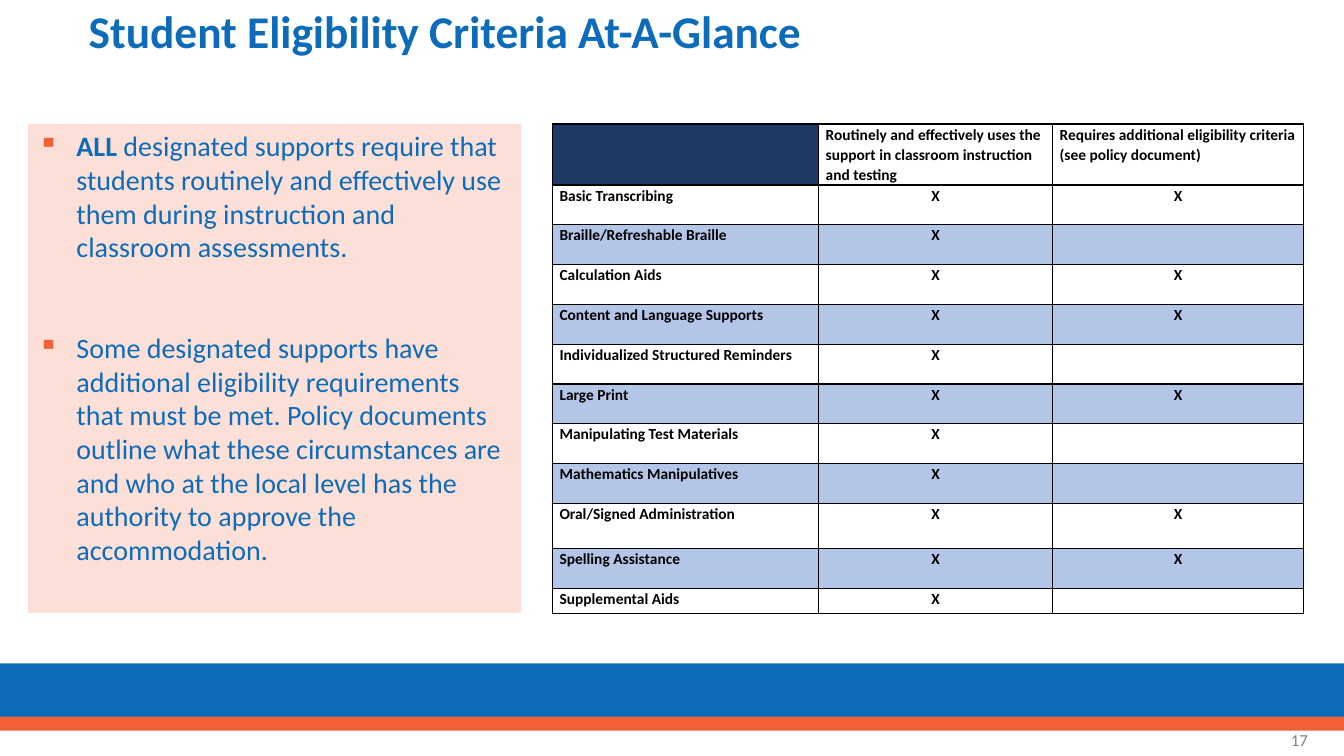
import pptx
import pptx.util
import pptx.dml.color
import pptx.enum.shapes
import pptx.enum.text
import pptx.oxml
import pptx.oxml.ns
from lxml import etree

Inches, Pt = pptx.util.Inches, pptx.util.Pt
RGBColor = pptx.dml.color.RGBColor
ALIGN, ANCHOR = pptx.enum.text.PP_ALIGN, pptx.enum.text.MSO_ANCHOR
RECT = pptx.enum.shapes.MSO_SHAPE.RECTANGLE
qn = pptx.oxml.ns.qn

BLUE = RGBColor(0x0D, 0x6C, 0xB9)
ORANGE = RGBColor(0xF1, 0x60, 0x38)
PINK = RGBColor(0xFC, 0xDF, 0xD7)
NAVY = RGBColor(0x1F, 0x38, 0x64)
STRIPE = RGBColor(0xB4, 0xC6, 0xE7)
WHITE = RGBColor(0xFF, 0xFF, 0xFF)
BLACK = RGBColor(0, 0, 0)
GREY = RGBColor(0x80, 0x80, 0x80)

TITLE = "Student Eligibility Criteria At-A-Glance"
PAGE = "17"
# Each bullet is a list of (text, bold) runs
BULLETS = [
    [("ALL", True),
     (" designated supports require that students routinely and effectively use them "
      "during instruction and classroom assessments.", False)],
    [("Some designated supports have additional eligibility requirements that must be met. "
      "Policy documents outline what these circumstances are and who at the local level "
      "has the authority to approve the accommodation.", False)],
]
HEADERS = ["", "Routinely and effectively uses the support in classroom instruction and testing",
           "Requires additional eligibility criteria (see policy document)"]
# Support, routinely used, additional criteria
SUPPORTS = [
    ("Basic Transcribing", "X", "X"),
    ("Braille/Refreshable Braille", "X", ""),
    ("Calculation Aids", "X", "X"),
    ("Content and Language Supports", "X", "X"),
    ("Individualized Structured Reminders", "X", ""),
    ("Large Print", "X", "X"),
    ("Manipulating Test Materials", "X", ""),
    ("Mathematics Manipulatives", "X", ""),
    ("Oral/Signed Administration", "X", "X"),
    ("Spelling Assistance", "X", "X"),
    ("Supplemental Aids", "X", ""),
]
COL_WIDTHS = [2.64, 2.32, 2.49]
ROW_HEIGHTS = [0.6] + [0.395] * 8 + [0.45, 0.395, 0.25]

TITLE_FONT = {"name": "Calibri", "size": Pt(32.4), "bold": True}
BODY_FONT = {"name": "Calibri", "size": Pt(20)}
CELL_FONT = {"name": "Calibri", "size": Pt(11), "bold": True}
PAGE_FONT = {"name": "Calibri", "size": Pt(12)}
CELL_MARGINS = {"margin_left": Inches(0.07), "margin_right": Inches(0.07),
                "margin_top": 0, "margin_bottom": 0}


def set_all(obj, values):
    for name, value in values.items():
        setattr(obj, name, value)


def add_run(p, text, font, color):
    r = p.add_run()
    r.text = text
    set_all(r.font, font)
    r.font.color.rgb = color
    return r


def add_rect(slide, box, color):
    sp = slide.shapes.add_shape(RECT, *map(Inches, box))
    sp.shadow.inherit = False
    sp.fill.solid()
    sp.fill.fore_color.rgb = color
    sp.line.fill.background()
    return sp


def set_bullet(p):
    pPr = p._p.get_or_add_pPr()
    pPr.set("marL", str(Inches(0.38)))
    pPr.set("indent", str(-Inches(0.38)))
    color = etree.SubElement(pPr, qn("a:buClr"))
    etree.SubElement(color, qn("a:srgbClr"), val=str(ORANGE))
    etree.SubElement(pPr, qn("a:buChar"), char="▪")


def set_borders(cell):
    tcPr = cell._tc.get_or_add_tcPr()
    for side in ("lnL", "lnR", "lnT", "lnB"):
        ln = etree.SubElement(tcPr, qn("a:" + side), w=str(Pt(1)))
        fill = etree.SubElement(ln, qn("a:solidFill"))
        etree.SubElement(fill, qn("a:srgbClr"), val=str(BLACK))


def add_title(slide):
    sp = slide.shapes.title
    set_all(sp, {"left": Inches(0.78), "top": Inches(0.17),
                 "width": Inches(12.16), "height": Inches(0.82)})
    tf = sp.text_frame
    # The deep bottom margin lifts the line to the top of the slide
    set_all(tf, {"vertical_anchor": ANCHOR.MIDDLE, "word_wrap": True,
                 "margin_bottom": Inches(0.54)})
    p = tf.paragraphs[0]
    set_all(p, {"alignment": ALIGN.LEFT, "line_spacing": 0.9})
    add_run(p, TITLE, TITLE_FONT, BLUE)


def add_summary(slide):
    tf = add_rect(slide, (0.28, 1.23, 4.89, 4.85), PINK).text_frame
    set_all(tf, {"vertical_anchor": ANCHOR.TOP, "word_wrap": True})
    for i, runs in enumerate(BULLETS):
        p = tf.add_paragraph() if i else tf.paragraphs[0]
        p.alignment = ALIGN.LEFT
        if i:
            p.space_before = Pt(48)
        set_bullet(p)
        for text, bold in runs:
            add_run(p, text, {**BODY_FONT, "bold": bold}, BLUE)


def add_criteria_table(slide):
    rows = [HEADERS] + SUPPORTS
    table = slide.shapes.add_table(len(rows), len(HEADERS), Inches(5.48), Inches(1.23),
                                   Inches(sum(COL_WIDTHS)), Inches(sum(ROW_HEIGHTS))).table
    for column, width in zip(table.columns, COL_WIDTHS):
        column.width = Inches(width)
    for i, (row, height) in enumerate(zip(rows, ROW_HEIGHTS)):
        table.rows[i].height = Inches(height)
        for j, text in enumerate(row):
            cell = table.cell(i, j)
            set_all(cell, CELL_MARGINS)
            set_borders(cell)
            cell.fill.solid()
            if i == 0:
                cell.fill.fore_color.rgb = WHITE if j else NAVY
            else:
                cell.fill.fore_color.rgb = WHITE if i % 2 else STRIPE
            p = cell.text_frame.paragraphs[0]
            p.line_spacing = 1.07
            p.alignment = ALIGN.CENTER if i and j else ALIGN.LEFT
            if text:
                add_run(p, text, CELL_FONT, BLACK)
            else:
                # Keeps an empty cell from stretching its row
                etree.SubElement(p._p, qn("a:endParaRPr"), sz="1100")


def add_page_number(slide):
    sp = slide.shapes.add_textbox(*map(Inches, (10.07, 7.14, 3, 0.4)))
    tf = sp.text_frame
    set_all(tf, {"vertical_anchor": ANCHOR.MIDDLE, "word_wrap": True})
    p = tf.paragraphs[0]
    p.alignment = ALIGN.RIGHT
    add_run(p, PAGE, PAGE_FONT, GREY)


def main():
    prs = pptx.Presentation()
    set_all(prs, {"slide_width": Inches(13.33), "slide_height": Inches(7.5)})
    slide = prs.slides.add_slide(prs.slide_layouts[5])
    add_rect(slide, (0, 6.58, 13.33, 0.58), BLUE)
    add_rect(slide, (0, 7.11, 13.33, 0.14), ORANGE)
    add_title(slide)
    add_summary(slide)
    add_criteria_table(slide)
    add_page_number(slide)
    prs.save("out.pptx")


if __name__ == "__main__":
    main()
